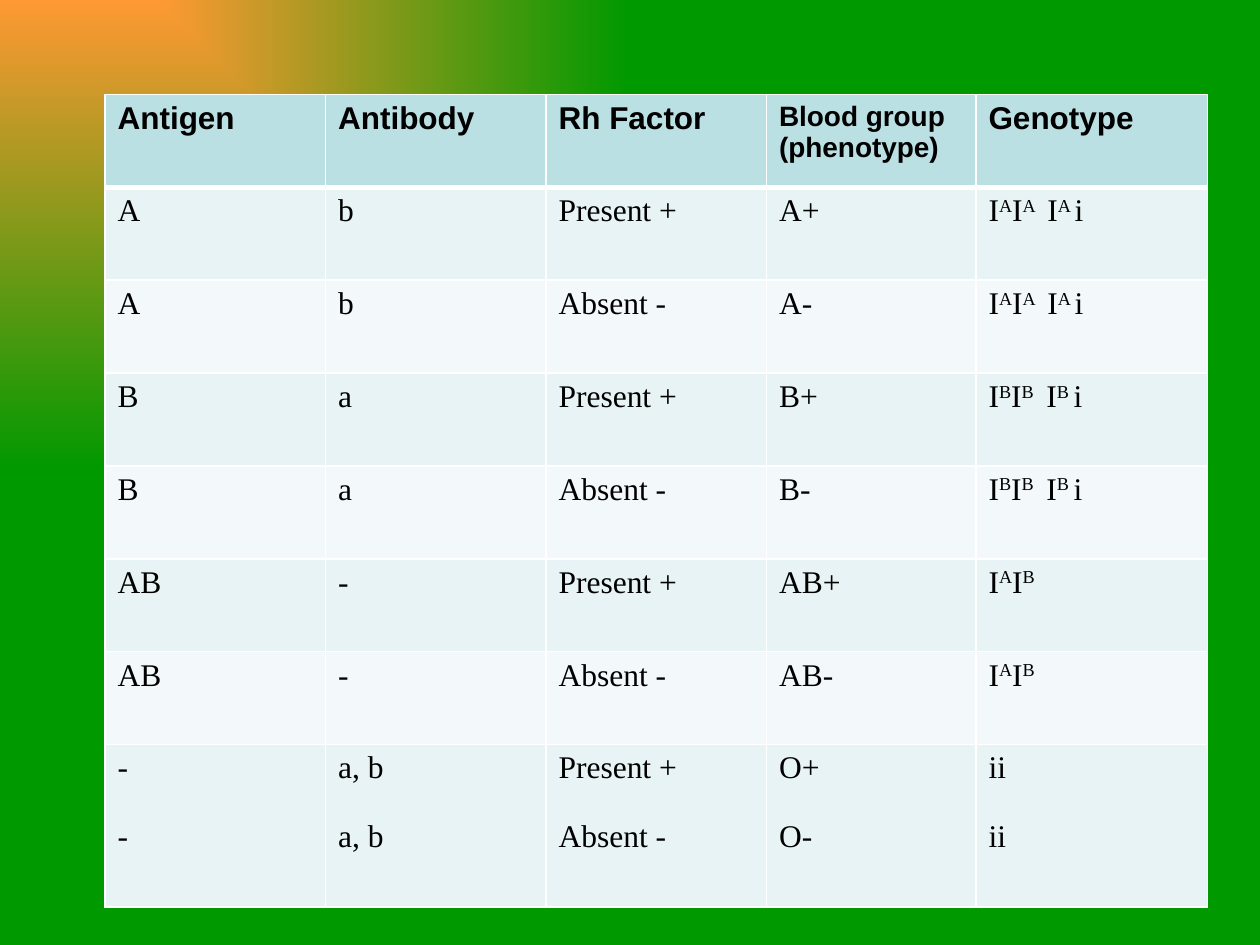
import dataclasses

import lxml.etree
import pptx
import pptx.dml.color
import pptx.oxml.ns
import pptx.util


@dataclasses.dataclass(frozen=True)
class Theme:
    """Colours, fonts and type sizes of the slide."""
    glow: str = "FF9933"
    ground: str = "009900"
    header: str = "BBE0E3"
    bands: tuple = ("E7F3F4", "F3F9FA")
    border: str = "FFFFFF"
    ink: str = "000000"
    header_font: str = "Arial"
    body_font: str = "Times New Roman"
    size: float = 18
    small_size: float = 16
    line: float = 1
    header_line: float = 3
    paragraph_gap: float = 19.3


THEME = Theme()
SLIDE_WIDTH = pptx.util.Inches(10)
SLIDE_HEIGHT = pptx.util.Inches(7.5)
COLUMN_SHARES = (0.2, 0.2, 0.2, 0.19, 0.21)
ROW_SHARES = (0.8 / 7,) * 7 + (0.2,)

HEADINGS = ("Antigen", "Antibody", "Rh Factor", "Blood group\n(phenotype)", "Genotype")
GENOTYPES = {
    "A": "I^A^I^A ^ I^A ^i",
    "B": "I^B^I^B ^ I^B ^i",
    "AB": "I^A^I^B",
}
ANTIBODIES = {"A": "b", "B": "a", "AB": "-"}
RH_FACTORS = {"+": "Present +", "-": "Absent -"}


def blood_rows():
    """Return the body rows, with superscripts between carets."""
    rows = [
        (antigen, ANTIBODIES[antigen], factor, antigen + sign, genotype)
        for antigen, genotype in GENOTYPES.items()
        for sign, factor in RH_FACTORS.items()
    ]
    rows.append(("-\n-", "a, b\na, b", "\n".join(RH_FACTORS.values()), "O+\nO-", "ii\nii"))
    return rows


def rgb(colour):
    """Return a colour object for a hex string."""
    return pptx.dml.color.RGBColor.from_string(colour)


def paint_background(slide):
    """Spread a glow from the top left corner over the background."""
    fill = slide.background.fill
    fill.gradient()
    for stop, colour in zip(fill.gradient_stops, (THEME.glow, THEME.ground)):
        stop.color.rgb = rgb(colour)
    qn = pptx.oxml.ns.qn
    gradient = next(slide.element.iter(qn("a:gradFill")))
    linear = gradient.find(qn("a:lin"))
    corner = lxml.etree.Element(qn("a:path"), {"path": "rect"})
    lxml.etree.SubElement(corner, qn("a:fillToRect"), {"r": "100000", "b": "100000"})
    gradient.replace(linear, corner)


def border_cell(cell, top, bottom):
    """Draw the four borders of a cell, before its fill is set."""
    qn = pptx.oxml.ns.qn
    properties = cell._tc.get_or_add_tcPr()
    widths = {"lnL": THEME.line, "lnR": THEME.line, "lnT": top, "lnB": bottom}
    for side, width in widths.items():
        line = lxml.etree.SubElement(
            properties, qn("a:" + side), {"w": str(pptx.util.Pt(width))})
        solid = lxml.etree.SubElement(line, qn("a:solidFill"))
        lxml.etree.SubElement(solid, qn("a:srgbClr"), {"val": THEME.border})


def write_cell(cell, content, font_name, size, bold, gap):
    """Write the lines of a cell, raising what stands between carets."""
    for index, line in enumerate(content.split("\n")):
        frame = cell.text_frame
        paragraph = frame.add_paragraph() if index else frame.paragraphs[0]
        paragraph.font.name = font_name
        paragraph.font.size = pptx.util.Pt(size)
        paragraph.font.bold = bold
        paragraph.font.color.rgb = rgb(THEME.ink)
        if index:
            paragraph.space_before = pptx.util.Pt(gap)
        for position, part in enumerate(line.split("^")):
            run = paragraph.add_run()
            run.text = part
            if position % 2:
                run._r.get_or_add_rPr().set("baseline", "30000")


def add_blood_table(slide, rows):
    """Add the table of blood groups below its header row."""
    width, height = int(SLIDE_WIDTH * 0.875), int(SLIDE_HEIGHT * 0.86)
    table = slide.shapes.add_table(
        len(rows) + 1, len(HEADINGS),
        SLIDE_WIDTH // 12, SLIDE_HEIGHT // 10, width, height).table
    for column, share in zip(table.columns, COLUMN_SHARES):
        column.width = int(width * share)
    for row, share in zip(table.rows, ROW_SHARES):
        row.height = int(height * share)
    for row_index, row in enumerate((HEADINGS, *rows)):
        is_header = row_index == 0
        colour = THEME.header if is_header else THEME.bands[(row_index - 1) % 2]
        for column_index, content in enumerate(row):
            cell = table.cell(row_index, column_index)
            border_cell(
                cell,
                THEME.header_line if row_index == 1 else THEME.line,
                THEME.header_line if is_header else THEME.line)
            cell.fill.solid()
            cell.fill.fore_color.rgb = rgb(colour)
            if is_header:
                size = THEME.small_size if "\n" in content else THEME.size
                write_cell(cell, content, THEME.header_font, size, True, 0)
            else:
                write_cell(cell, content, THEME.body_font, THEME.size, False,
                           THEME.paragraph_gap)


def main():
    """Build the slide and save it."""
    deck = pptx.Presentation()
    deck.slide_width, deck.slide_height = SLIDE_WIDTH, SLIDE_HEIGHT
    slide = deck.slides.add_slide(deck.slide_layouts[6])
    paint_background(slide)
    add_blood_table(slide, blood_rows())
    deck.save("out.pptx")


if __name__ == "__main__":
    main()
